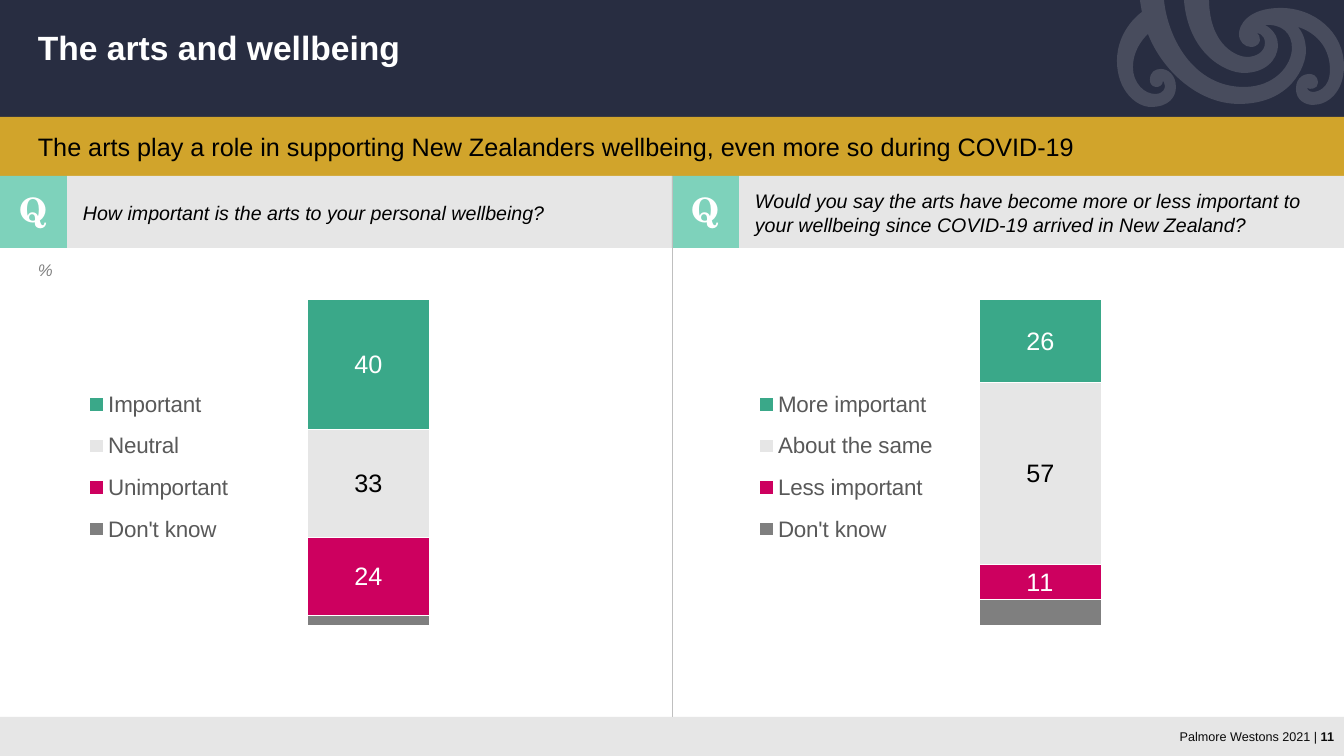
from dataclasses import dataclass

from lxml import etree
from pptx import Presentation
from pptx import util as u
from pptx.chart.data import CategoryChartData
from pptx.dml.color import RGBColor
from pptx.enum import chart as charts, shapes, text
from pptx.oxml import parse_xml
from pptx.oxml.ns import nsdecls, qn

SCALE = 12192000 / 1344
PANEL = 672


@dataclass(frozen=True)
class Theme:
    navy: str = "282D41"
    gold: str = "D1A42B"
    grey: str = "E6E6E6"
    mint: str = "7ED2BB"
    green: str = "3AA889"
    pink: str = "CD005F"
    dark: str = "7F7F7F"
    unit: str = "808080"
    legend: str = "595959"
    rule: str = "BFBFBF"
    white: str = "FFFFFF"
    black: str = "000000"
    footer: str = "0A0A0A"
    sans: str = "Arial"
    serif: str = "TeX Gyre Schola"
    title_size: int = 24
    lead_size: int = 18
    legend_size: int = 16
    question_size: int = 14
    unit_size: int = 12
    chart_size: int = 10
    footer_size: int = 9


THEME = Theme()

KORU_START = (1117, 61)
KORU = [
    (1117, 90, 1136, 107, 1151, 107), (1169, 107, 1176, 97, 1176, 87),
    (1176, 75, 1168, 69, 1161, 69), (1155, 69, 1150, 72, 1150, 80),
    (1150, 87, 1156, 87, 1157, 87), (1158, 87, 1163, 86, 1163, 81),
    (1163, 81, 1165, 83, 1165, 86), (1165, 88, 1164, 94, 1155, 94),
    (1145, 94, 1133, 84, 1133, 67), (1133, 47, 1148, 34, 1148, 34),
    (1162, 70, 1198, 104, 1239, 104), (1291, 104, 1306, 66, 1306, 51),
    (1306, 45, 1305, 35, 1298, 27), (1298, 27, 1330, 35, 1330, 70),
    (1330, 89, 1317, 92, 1313, 92), (1308, 92, 1307, 88, 1307, 88),
    (1310, 90, 1318, 89, 1318, 83), (1318, 75, 1312, 74, 1309, 74),
    (1306, 74, 1296, 76, 1296, 89), (1296, 100, 1305, 105, 1313, 105),
    (1328, 105, 1344, 92, 1344, 66), (1344, 32, 1314, 8, 1281, 8),
    (1247, 8, 1239, 26, 1239, 34), (1239, 42, 1245, 47, 1251, 47),
    (1258, 47, 1260, 42, 1260, 40), (1260, 37, 1259, 34, 1257, 33),
    (1257, 33, 1265, 34, 1265, 43), (1265, 52, 1256, 57, 1247, 57),
    (1239, 57, 1210, 48, 1209, 0), (1184, 0),
    (1188, 52, 1224, 73, 1244, 73), (1264, 73, 1278, 61, 1278, 45),
    (1278, 31, 1265, 25, 1265, 25), (1282, 24, 1292, 33, 1292, 48),
    (1292, 65, 1275, 87, 1244, 87), (1194, 87, 1168, 39, 1164, 0),
    (1140, 0), (1141, 7, 1142, 12, 1142, 12), (1142, 12, 1117, 29, 1117, 61),
]


def px(*lengths):
    return [u.Emu(round(length * SCALE)) for length in lengths]


def rgb(color):
    return RGBColor.from_string(color)


def set_font(font, size, color, bold=False, italic=False, name=THEME.sans):
    font.name, font.size, font.color.rgb = name, u.Pt(size), rgb(color)
    font.bold, font.italic = bold, italic


def paint(shape, color):
    shape.fill.solid()
    shape.fill.fore_color.rgb = rgb(color)
    shape.line.fill.background()
    shape.shadow.inherit = False


def add_band(page, bounds, color):
    band = page.shapes.add_shape(shapes.MSO_SHAPE.RECTANGLE, *px(*bounds))
    paint(band, color)
    return band


def add_text(page, bounds, words, size, color, align=text.PP_ALIGN.LEFT,
             middle=False, wrap=True, **style):
    box = page.shapes.add_textbox(*px(*bounds))
    frame = box.text_frame
    frame.text = words
    frame.word_wrap = wrap
    frame.vertical_anchor = text.MSO_ANCHOR.MIDDLE if middle else text.MSO_ANCHOR.TOP
    para = frame.paragraphs[0]
    para.alignment = align
    set_font(para.runs[0].font, size, color, **style)
    return para


def add_koru(page):
    builder = page.shapes.build_freeform(*KORU_START, scale=SCALE)
    builder.add_line_segments([segment[-2:] for segment in KORU], close=True)
    koru = builder.convert_to_shape()
    left, top = builder.shape_offset_x, builder.shape_offset_y
    sides = list(koru._element.iter(qn("a:lnTo")))
    for side, segment in zip(sides, KORU):
        if len(segment) == 6:
            side.tag = qn("a:cubicBezTo")
            side.clear()
            for x, y in zip(segment[::2], segment[1::2]):
                etree.SubElement(side, qn("a:pt"), x=str(x - left), y=str(y - top))
    paint(koru, THEME.white)
    color = koru._element.spPr.find(".//" + qn("a:srgbClr"))
    etree.SubElement(color, qn("a:alpha")).set("val", "15000")


def add_divider(page, above, below):
    divider = page.shapes.add_connector(
        shapes.MSO_CONNECTOR.STRAIGHT, *px(PANEL, 176, PANEL, 717))
    divider.begin_connect(above, 2)
    divider.end_connect(below, 0)
    divider.line.color.rgb = rgb(THEME.rule)
    divider.line.width = u.Pt(0.5)
    etree.SubElement(divider._element.spPr, qn("a:effectLst"))


def set_layout(parent, index, bounds, target=""):
    for layout in parent.findall(qn("c:layout")):
        parent.remove(layout)
    sizes = "".join(f'<c:{key} val="{value}"/>' for key, value in zip("xywh", bounds))
    parent.insert(index, parse_xml(
        f'<c:layout {nsdecls("c")}><c:manualLayout>{target}'
        f'<c:xMode val="edge"/><c:yMode val="edge"/>{sizes}</c:manualLayout></c:layout>'))


def add_stack(page, bounds, shares, legend_width):
    data = CategoryChartData()
    data.categories = ["1"]
    for name, value in shares:
        data.add_series(name, [value])
    chart = page.shapes.add_chart(
        charts.XL_CHART_TYPE.COLUMN_STACKED_100, *px(*bounds), data).chart
    set_font(chart.font, THEME.chart_size, THEME.black)
    chart.has_title = False
    chart.category_axis.visible = chart.value_axis.visible = False
    chart.value_axis.has_major_gridlines = False
    chart.has_legend = True
    chart.legend.position = charts.XL_LEGEND_POSITION.LEFT
    chart.legend.include_in_layout = False
    set_font(chart.legend.font, THEME.legend_size, THEME.legend)
    plot = chart.plots[0]
    plot.gap_width, plot.overlap, plot.vary_by_categories = 150, 100, False
    colors = [(THEME.dark, None), (THEME.pink, THEME.white),
              (THEME.grey, THEME.black), (THEME.green, THEME.white)]
    for series, (color, label_color) in zip(plot.series, colors):
        series.format.fill.solid()
        series.format.fill.fore_color.rgb = rgb(color)
        series.format.line.color.rgb = rgb(THEME.white)
        series.format.line.width = u.Pt(0.75)
        if label_color:
            labels = series.data_labels
            labels.show_value = True
            labels.position = charts.XL_LABEL_POSITION.CENTER
            set_font(labels.font, THEME.lead_size, label_color)
    set_layout(chart.element.find(".//" + qn("c:plotArea")), 0,
               (0.25, 0.09, 0.5, 0.78), '<c:layoutTarget val="inner"/>')
    set_layout(chart.element.find(".//" + qn("c:legend")), 1,
               (0.03, 0.27, legend_width, 0.44))


def add_panel(page, left, question, shares, legend_width):
    add_band(page, (left + 67, 176, 605, 72), THEME.grey)
    add_band(page, (left, 176, 67, 72), THEME.mint)
    add_text(page, (left + 10, 184, 47, 50), "Q", THEME.title_size, THEME.white,
             align=text.PP_ALIGN.CENTER, bold=True, name=THEME.serif)
    add_text(page, (left + 73, 184, 599, 57), question, THEME.question_size,
             THEME.black, middle=True, italic=True)
    add_stack(page, (left + 65, 262, 607, 418), shares, legend_width)


def add_footer(page):
    band = add_band(page, (0, 717, 1344, 39), THEME.grey)
    para = add_text(page, (1166, 724, 178, 25), "Palmore Westons 2021 | ",
                    THEME.footer_size, THEME.footer, align=text.PP_ALIGN.RIGHT,
                    middle=True, wrap=False)
    span = para.add_run()
    span.text = "11"
    set_font(span.font, THEME.footer_size, THEME.footer, bold=True)
    return band


def main():
    deck = Presentation()
    deck.slide_width, deck.slide_height = px(1344, 756)
    page = deck.slides.add_slide(deck.slide_layouts[6])
    add_band(page, (0, 0, 1344, 119), THEME.navy)
    add_koru(page)
    footer = add_footer(page)
    title = add_text(page, (28, 27, 1288, 46), "The arts and wellbeing",
                     THEME.title_size, THEME.white, bold=True)
    title.line_spacing = 0.9
    lead = add_band(page, (0, 117, 1344, 59), THEME.gold)
    add_text(page, (28, 126, 1288, 40),
             "The arts play a role in supporting New Zealanders wellbeing, "
             "even more so during COVID-19", THEME.lead_size, THEME.black)
    unit = add_text(page, (28, 255, 37, 30), "%", THEME.unit_size, THEME.unit,
                    wrap=False, italic=True)
    unit.runs[0].font._element.set("spc", "150")
    add_panel(page, 0, "How important is the arts to your personal wellbeing?",
              [("Don't know", 3), ("Unimportant", 24), ("Neutral", 33),
               ("Important", 40)], 0.25)
    add_panel(page, PANEL, "Would you say the arts have become more or less important "
              "to your wellbeing since COVID-19 arrived in New Zealand?",
              [("Don't know", 8), ("Less important", 11), ("About the same", 57),
               ("More important", 26)], 0.3)
    add_divider(page, lead, footer)
    deck.save("out.pptx")


if __name__ == "__main__":
    main()
